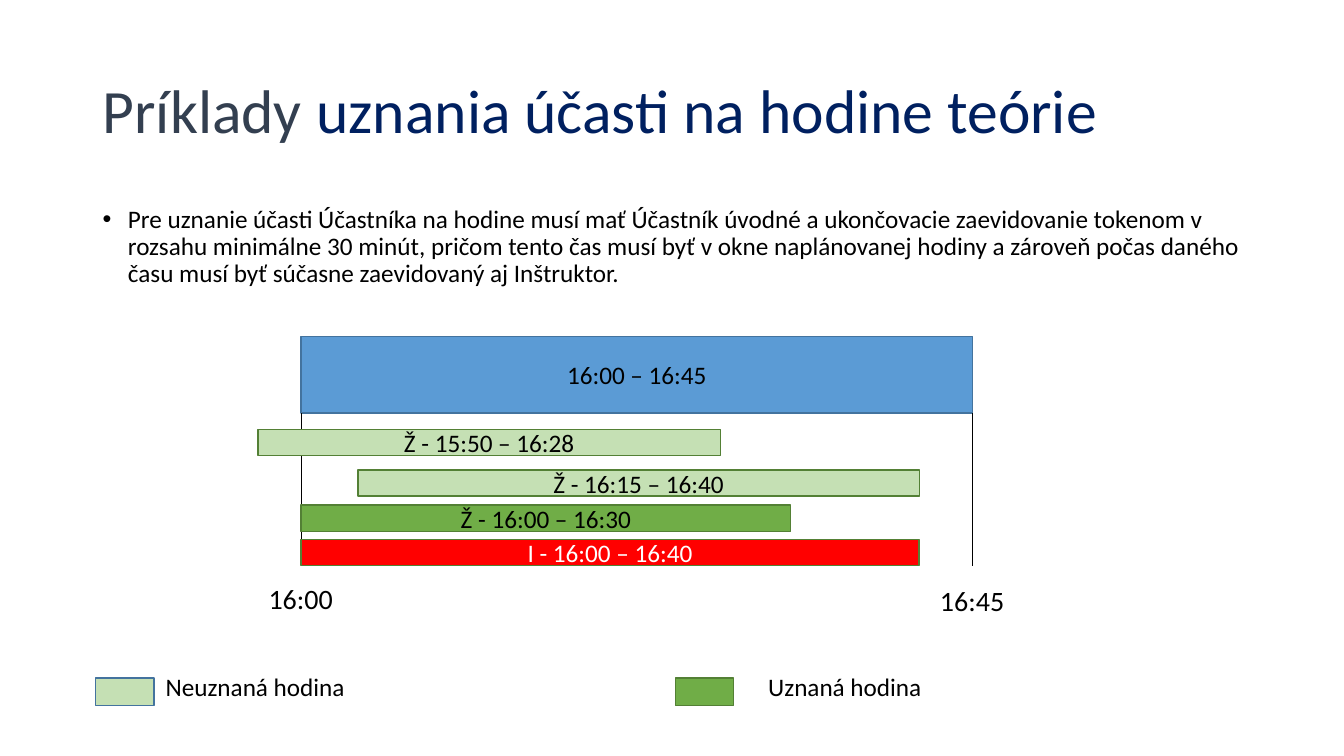
from dataclasses import dataclass

from lxml import etree
from pptx import Presentation
from pptx.dml.color import RGBColor
from pptx.enum.shapes import MSO_CONNECTOR, MSO_SHAPE
from pptx.enum.text import MSO_ANCHOR, MSO_AUTO_SIZE, PP_ALIGN
from pptx.oxml.ns import qn
from pptx.util import Cm, Pt

RECTANGLE = MSO_SHAPE.RECTANGLE
STRAIGHT = MSO_CONNECTOR.STRAIGHT
MIDDLE = MSO_ANCHOR.MIDDLE
CENTER = PP_ALIGN.CENTER
GROW = MSO_AUTO_SIZE.SHAPE_TO_FIT_TEXT

FONT = "Calibri"
BLACK, WHITE = "000000", "FFFFFF"
SLATE, NAVY = "333F50", "002060"
BLUE, BLUE_EDGE = "5B9BD5", "43739E"
PALE_GREEN, GREEN, GREEN_EDGE = "C5E0B4", "70AD47", "538035"
RED = "FF0000"

# Lengths in centimetres
MARGIN, CONTENT_WIDTH = 2.34, 29.21
LESSON_START, LESSON_END = 7.59, 24.51
LESSON_TOP, LESSON_HEIGHT = 8.48, 1.93
LESSON_BOTTOM = LESSON_TOP + LESSON_HEIGHT
MARKER_BOTTOM = 14.27
BAR_HEIGHT = 0.66

RULE = (
    "Pre uznanie účasti Účastníka na hodine musí mať Účastník úvodné "
    "a ukončovacie zaevidovanie tokenom v rozsahu minimálne 30 minút, "
    "pričom tento čas musí byť v okne naplánovanej hodiny a zároveň počas "
    "daného času musí byť súčasne zaevidovaný aj Inštruktor."
)


@dataclass(frozen=True)
class Bar:
    left: float
    top: float
    width: float
    height: float
    fill: str
    edge: str = GREEN_EDGE
    text: str = ""
    color: str = BLACK


@dataclass(frozen=True)
class Label:
    left: float
    top: float
    width: float
    height: float
    text: str
    size: int


LESSON = Bar(LESSON_START, LESSON_TOP, LESSON_END - LESSON_START, LESSON_HEIGHT,
             BLUE, BLUE_EDGE, "16:00 – 16:45")
ATTENDANCE = [
    Bar(6.5, 10.82, 11.66, BAR_HEIGHT, PALE_GREEN, text="Ž - 15:50 – 16:28"),
    Bar(9.02, 11.84, 14.15, BAR_HEIGHT, PALE_GREEN, text="Ž - 16:15 – 16:40"),
    Bar(LESSON_START, 12.73, 12.34, BAR_HEIGHT, GREEN, text="Ž - 16:00 – 16:30"),
    Bar(LESSON_START, 13.59, 15.57, BAR_HEIGHT, RED, text="I - 16:00 – 16:40",
        color=WHITE),
]
LEGEND_SWATCHES = [
    Bar(2.41, 17.09, 1.47, 0.69, PALE_GREEN, BLUE_EDGE),
    Bar(17.02, 17.09, 1.47, 0.69, GREEN),
]
TIME_LABELS = [
    Label(6.5, 14.53, 2.16, 1.12, "16:00", 20),
    Label(23.42, 14.58, 2.16, 1.12, "16:45", 20),
]
LEGEND_LABELS = [
    Label(3.89, 16.79, 5.08, 1.02, "Neuznaná hodina", 18),
    Label(19.08, 16.79, 4.42, 1.02, "Uznaná hodina", 18),
]


def rgb(value: str) -> RGBColor:
    return RGBColor.from_string(value)


def set_font(font, size: int, color: str) -> None:
    font.name = FONT
    font.size = Pt(size)
    font.color.rgb = rgb(color)


def add_text_frame(slide, left: float, top: float, width: float, height: float):
    box = slide.shapes.add_textbox(Cm(left), Cm(top), Cm(width), Cm(height))
    box.text_frame.word_wrap = True
    return box.text_frame


def draw_title(slide) -> None:
    frame = add_text_frame(slide, MARGIN, 1.02, CONTENT_WIDTH, 3.68)
    frame.vertical_anchor = MIDDLE
    paragraph = frame.paragraphs[0]
    paragraph.line_spacing = 0.9
    for text, color in (("Príklady ", SLATE),
                        ("uznania účasti na hodine teórie", NAVY)):
        run = paragraph.add_run()
        run.text = text
        set_font(run.font, 44, color)


def draw_rule(slide) -> None:
    frame = add_text_frame(slide, MARGIN, 5.08, CONTENT_WIDTH, 12.09)
    paragraph = frame.paragraphs[0]
    paragraph.text = RULE
    paragraph.line_spacing = 0.9
    paragraph.space_before = Pt(10)
    set_font(paragraph.font, 18, BLACK)
    # Hanging bullet, placed ahead of the default run properties
    properties = paragraph._p.get_or_add_pPr()
    properties.set("marL", str(Cm(0.635)))
    properties.set("indent", str(-Cm(0.635)))
    bullet_font = etree.Element(qn("a:buFont"), typeface="Arial")
    bullet = etree.Element(qn("a:buChar"), char="•")
    defaults = properties.find(qn("a:defRPr"))
    defaults.addprevious(bullet_font)
    defaults.addprevious(bullet)


def draw_bar(slide, bar: Bar) -> None:
    shape = slide.shapes.add_shape(RECTANGLE, Cm(bar.left), Cm(bar.top),
                                   Cm(bar.width), Cm(bar.height))
    shape.shadow.inherit = False
    shape.fill.solid()
    shape.fill.fore_color.rgb = rgb(bar.fill)
    shape.line.color.rgb = rgb(bar.edge)
    shape.line.width = Pt(1)
    if bar.text:
        shape.text_frame.vertical_anchor = MIDDLE
        paragraph = shape.text_frame.paragraphs[0]
        paragraph.text = bar.text
        paragraph.alignment = CENTER
        set_font(paragraph.font, 18, bar.color)


def draw_marker(slide, x: float) -> None:
    marker = slide.shapes.add_connector(STRAIGHT, Cm(x), Cm(LESSON_BOTTOM),
                                        Cm(x), Cm(MARKER_BOTTOM))
    marker.line.color.rgb = rgb(BLACK)
    marker.line.width = Pt(0.5)
    etree.SubElement(marker._element.spPr, qn("a:effectLst"))


def draw_label(slide, label: Label) -> None:
    frame = add_text_frame(slide, label.left, label.top, label.width, label.height)
    frame.word_wrap = False
    frame.auto_size = GROW
    paragraph = frame.paragraphs[0]
    paragraph.text = label.text
    paragraph.alignment = CENTER
    set_font(paragraph.font, label.size, BLACK)


def main() -> None:
    presentation = Presentation()
    presentation.slide_width = Cm(33.87)
    presentation.slide_height = Cm(19.05)
    slide = presentation.slides.add_slide(presentation.slide_layouts[6])

    # Heading and rule
    draw_title(slide)
    draw_rule(slide)

    # Lesson window with its start and end
    draw_bar(slide, LESSON)
    for x in (LESSON_START, LESSON_END):
        draw_marker(slide, x)
    for label in TIME_LABELS:
        draw_label(slide, label)

    # Recorded attendance and legend
    for bar in ATTENDANCE + LEGEND_SWATCHES:
        draw_bar(slide, bar)
    for label in LEGEND_LABELS:
        draw_label(slide, label)

    presentation.save("out.pptx")


if __name__ == "__main__":
    main()
